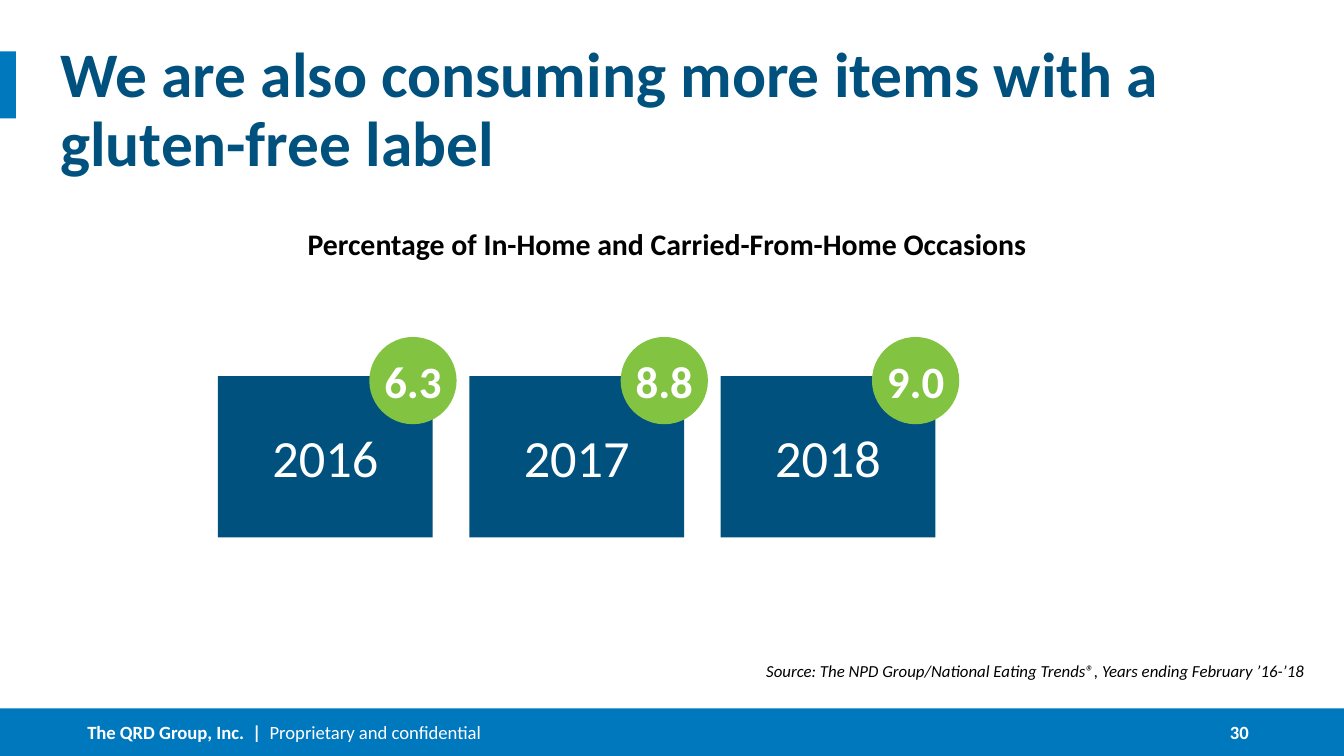
from dataclasses import dataclass

import pptx
import pptx.dml.color
import pptx.enum.shapes
import pptx.enum.text
import pptx.oxml.ns
import pptx.shapes.autoshape
import pptx.slide
import pptx.text.text
import pptx.util
from lxml import etree
from pptx.dml.color import RGBColor
from pptx.enum.shapes import MSO_SHAPE
from pptx.enum.text import MSO_ANCHOR, MSO_AUTO_SIZE, PP_ALIGN
from pptx.util import Cm

BLUE = RGBColor(0x00, 0x78, 0xBE)
NAVY = RGBColor(0x00, 0x51, 0x7D)
GREEN = RGBColor(0x82, 0xC3, 0x41)
WHITE = RGBColor(0xFF, 0xFF, 0xFF)
BLACK = RGBColor(0x00, 0x00, 0x00)

SLIDE_WIDTH, SLIDE_HEIGHT = 25.4, 14.29
FOOTER_TOP, FOOTER_HEIGHT = 13.39, 0.9
CARD_LEFT, CARD_PITCH = 4.12, 4.75
BADGE_OFFSET = 2.86


@dataclass(frozen=True)
class Box:
    left: float
    top: float
    width: float
    height: float


@dataclass(frozen=True)
class Style:
    size: float
    color: RGBColor
    bold: bool = False
    italic: bool = False


@dataclass(frozen=True)
class YearShare:
    year: str
    share: str


YEAR_SHARES = [YearShare("2016", "6.3"), YearShare("2017", "8.8"), YearShare("2018", "9.0")]


def place(shape: pptx.shapes.autoshape.Shape, box: Box) -> None:
    shape.left, shape.top = Cm(box.left), Cm(box.top)
    shape.width, shape.height = Cm(box.width), Cm(box.height)


def set_frame(frame: pptx.text.text.TextFrame, anchor: MSO_ANCHOR,
              margin: float = 0, wrap: bool = True) -> None:
    frame.auto_size = MSO_AUTO_SIZE.NONE
    frame.word_wrap = wrap
    frame.vertical_anchor = anchor
    frame.margin_left = frame.margin_right = Cm(margin)
    frame.margin_top = frame.margin_bottom = Cm(margin)


def add_run(paragraph: pptx.text.text._Paragraph, text: str, style: Style) -> None:
    run = paragraph.add_run()
    run.text = text
    run.font.name = "Calibri"
    run.font.size = pptx.util.Pt(style.size)
    run.font.bold = style.bold
    run.font.italic = style.italic
    run.font.color.rgb = style.color


def add_block(slide: pptx.slide.Slide, kind: MSO_SHAPE, box: Box,
              fill: RGBColor) -> pptx.shapes.autoshape.Shape:
    block = slide.shapes.add_shape(kind, Cm(box.left), Cm(box.top), Cm(box.width), Cm(box.height))
    block.shadow.inherit = False
    block.fill.solid()
    block.fill.fore_color.rgb = fill
    block.line.fill.background()
    return block


def add_label_block(slide: pptx.slide.Slide, kind: MSO_SHAPE, box: Box,
                    fill: RGBColor, text: str, style: Style) -> None:
    frame = add_block(slide, kind, box, fill).text_frame
    set_frame(frame, MSO_ANCHOR.MIDDLE, wrap=False)
    frame.paragraphs[0].alignment = PP_ALIGN.CENTER
    add_run(frame.paragraphs[0], text, style)


def add_text(slide: pptx.slide.Slide, box: Box, align: PP_ALIGN,
             margin: float = 0) -> pptx.text.text._Paragraph:
    textbox = slide.shapes.add_textbox(Cm(box.left), Cm(box.top), Cm(box.width), Cm(box.height))
    set_frame(textbox.text_frame, MSO_ANCHOR.MIDDLE, margin)
    paragraph = textbox.text_frame.paragraphs[0]
    paragraph.alignment = align
    return paragraph


def fill_placeholder(placeholder: pptx.shapes.autoshape.Shape, box: Box, anchor: MSO_ANCHOR,
                     align: PP_ALIGN, spacing: float, text: str, style: Style) -> None:
    place(placeholder, box)
    set_frame(placeholder.text_frame, anchor)
    paragraph = placeholder.text_frame.paragraphs[0]
    properties = paragraph._p.get_or_add_pPr()
    properties.set("marL", "0")
    properties.set("indent", "0")
    etree.SubElement(properties, pptx.oxml.ns.qn("a:buNone"))
    paragraph.alignment = align
    paragraph.line_spacing = spacing
    paragraph.space_before = pptx.util.Pt(0)
    add_run(paragraph, text, style)


def add_footer(slide: pptx.slide.Slide) -> None:
    add_block(slide, MSO_SHAPE.RECTANGLE,
              Box(0, FOOTER_TOP, SLIDE_WIDTH, FOOTER_HEIGHT), BLUE)
    notice = add_text(slide, Box(1.65, FOOTER_TOP, 10.44, FOOTER_HEIGHT), PP_ALIGN.LEFT)
    add_run(notice, "The QRD Group, Inc.  |  ", Style(10, WHITE, bold=True))
    add_run(notice, "Proprietary and confidential", Style(10, WHITE))
    page_number = add_text(slide, Box(22.33, FOOTER_TOP, 1.27, FOOTER_HEIGHT), PP_ALIGN.RIGHT)
    add_run(page_number, "30", Style(10, WHITE, bold=True))


def add_year_shares(slide: pptx.slide.Slide) -> None:
    for index, item in enumerate(YEAR_SHARES):
        left = CARD_LEFT + index * CARD_PITCH
        add_label_block(slide, MSO_SHAPE.RECTANGLE, Box(left, 7.11, 4.06, 3.05),
                        NAVY, item.year, Style(28, WHITE))
        add_label_block(slide, MSO_SHAPE.OVAL, Box(left + BADGE_OFFSET, 6.37, 1.65, 1.65),
                        GREEN, item.share, Style(24, WHITE, bold=True))


def main() -> None:
    presentation = pptx.Presentation()
    presentation.slide_width, presentation.slide_height = Cm(SLIDE_WIDTH), Cm(SLIDE_HEIGHT)
    slide = presentation.slides.add_slide(presentation.slide_layouts[1])

    add_footer(slide)
    add_block(slide, MSO_SHAPE.RECTANGLE, Box(0, 0.97, 0.3, 1.27), BLUE)
    fill_placeholder(slide.shapes.title, Box(1.14, 0.81, 23.5, 1.27), MSO_ANCHOR.TOP,
                     PP_ALIGN.LEFT, 0.9,
                     "We are also consuming more items with a gluten-free label",
                     Style(34, NAVY, bold=True))
    fill_placeholder(slide.placeholders[1], Box(1.14, 12.14, 23.5, 0.74), MSO_ANCHOR.BOTTOM,
                     PP_ALIGN.RIGHT, 0.85,
                     "Source: The NPD Group/National Eating Trends®, Years ending February ’16-’18",
                     Style(9, BLACK, italic=True))
    add_year_shares(slide)
    measure = add_text(slide, Box(5.28, 4.14, 14.66, 0.94), PP_ALIGN.CENTER, margin=0.13)
    add_run(measure, "Percentage of In-Home and Carried-From-Home Occasions",
            Style(16, BLACK, bold=True))

    presentation.save("out.pptx")


if __name__ == "__main__":
    main()
